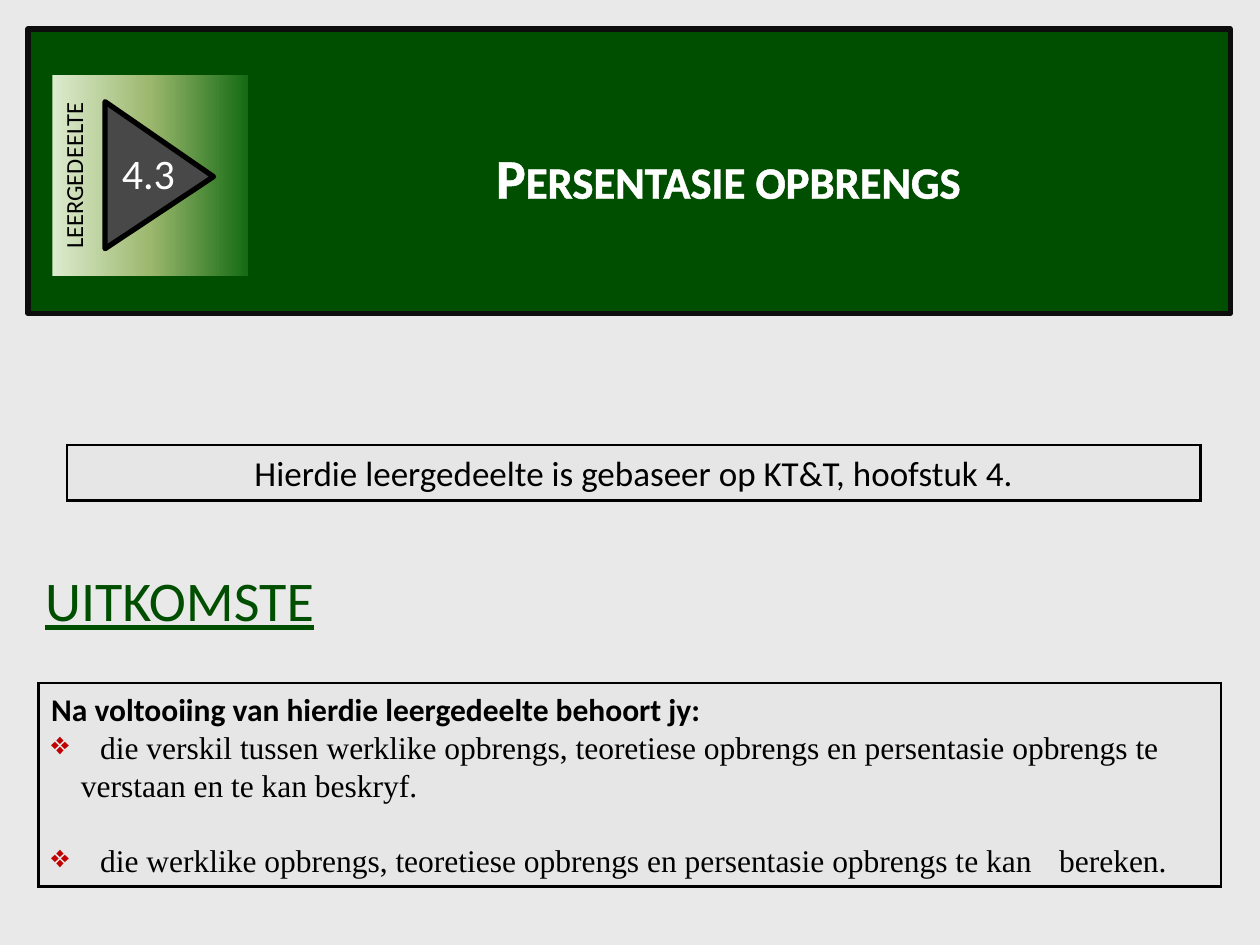
import copy
import pptx
import pptx.dml.color
import pptx.enum.shapes
import pptx.enum.text
import pptx.oxml
import pptx.oxml.ns
import pptx.util
from pptx.util import Pt

SHAPES = pptx.enum.shapes.MSO_SHAPE
ALIGN = pptx.enum.text.PP_ALIGN
ANCHOR = pptx.enum.text.MSO_ANCHOR

# Content
SECTION_LABEL, SECTION_NUMBER = "LEERGEDEELTE", "4.3"
TITLE = "Persentasie opbrengs"
SOURCE_NOTE = "Hierdie leergedeelte is gebaseer op KT&T, hoofstuk 4."
HEADING = "UITKOMSTE"
OUTCOMES_INTRO = "Na voltooiing van hierdie leergedeelte behoort jy:"
OUTCOMES = [
    "\tdie verskil tussen werklike opbrengs, teoretiese opbrengs en persentasie "
    "opbrengs te \tverstaan en te kan beskryf.",
    "\tdie werklike opbrengs, teoretiese opbrengs en persentasie opbrengs te kan \tbereken.",
]
GREEN, BLACK, WHITE, PANEL = "004E00", "000000", "FFFFFF", "E6E6E6"
BADGE_STOPS = [(0, "DDEBCF"), (0.5, "9CB86E"), (1, "156B13")]


def rgb(value):
    return pptx.dml.color.RGBColor.from_string(value)


def element(xml):
    """Parse a DrawingML fragment whose root tag has the a: prefix."""
    head, rest = xml.split(">", 1) if not xml.endswith("/>") else (xml[:-2], None)
    names = pptx.oxml.ns.nsdecls("a")
    return pptx.oxml.parse_xml(f"{head} {names}/>" if rest is None else f"{head} {names}>{rest}")


def add_panel(parent, kind, left, top, width, height, fill=None, line=None, weight=1.5, miter=False):
    shape = parent.add_shape(kind, Pt(left), Pt(top), Pt(width), Pt(height))
    shape.shadow.inherit = False
    if fill:
        shape.fill.solid()
        shape.fill.fore_color.rgb = rgb(fill)
    if line:
        shape.line.color.rgb = rgb(line)
        shape.line.width = Pt(weight)
        if miter:
            shape.line._get_or_add_ln().append(element('<a:miter lim="800000"/>'))
    else:
        shape.line.fill.background()
    return shape


def add_box(parent, left, top, width, height):
    return parent.add_textbox(Pt(left), Pt(top), Pt(width), Pt(height))


def write(box, text, size=18, font="Calibri", color=BLACK, bold=False, underline=False,
          small_caps=False, outline=None, align=ALIGN.LEFT, anchor=ANCHOR.TOP,
          wrap=True, bullet=None, before=0, first=True):
    frame = box.text_frame
    frame.word_wrap = wrap
    frame.vertical_anchor = anchor
    para = frame.paragraphs[0] if first else frame.add_paragraph()
    para.alignment = align
    para.space_before = Pt(before)
    span = para.add_run()
    span.text = text
    span.font.name, span.font.size = font, Pt(size)
    span.font.bold, span.font.underline = bold, underline
    span.font.color.rgb = rgb(color)
    run_format = span.font._element
    if small_caps:
        run_format.set("cap", "small")
    if outline:
        line_color, weight = outline
        run_format.insert(0, element(
            f'<a:ln w="{Pt(weight)}"><a:solidFill><a:srgbClr val="{line_color}"/></a:solidFill></a:ln>'))
    if bullet:
        layout = para._p.get_or_add_pPr()
        layout.set("marL", str(Pt(17)))
        layout.set("indent", str(-Pt(17)))
        layout.append(element(f'<a:buClr><a:srgbClr val="{bullet[1]}"/></a:buClr>'))
        layout.append(element(f'<a:buChar char="{bullet[0]}"/>'))
        layout.append(element(f'<a:tabLst><a:tab pos="{Pt(28)}" algn="l"/></a:tabLst>'))


def fill_gradient(shape, stops, angle):
    shape.fill.gradient()
    shape.fill.gradient_angle = angle
    stop_list = shape.fill.gradient_stops[0]._gs.getparent()
    stop_list.insert(1, copy.deepcopy(stop_list[0]))
    for stop, (position, color) in zip(shape.fill.gradient_stops, stops):
        stop.position = position
        stop.color.rgb = rgb(color)


deck = pptx.Presentation()
deck.slide_width, deck.slide_height = Pt(720), Pt(540)
page = deck.slides.add_slide(deck.slide_layouts[6])
page.background.fill.solid()
page.background.fill.fore_color.rgb = rgb("E9E9E9")

# Source note
note = add_panel(page.shapes, SHAPES.RECTANGLE, 38.2, 254.3, 648, 31.6, PANEL, BLACK, miter=True)
write(note, SOURCE_NOTE, size=20, align=ALIGN.CENTER, anchor=ANCHOR.MIDDLE)

# Title banner
add_panel(page.shapes, SHAPES.RECTANGLE, 16, 16.6, 687, 162.6, GREEN, "0D0D0D", 3)
title = add_box(page.shapes, 152, 78, 528.5, 46)
write(title, TITLE, size=32, color=WHITE, bold=True, small_caps=True,
      outline=(WHITE, 0.75), align=ALIGN.CENTER)

# Section badge
badge = page.shapes.add_group_shape().shapes
label = add_panel(badge, SHAPES.RECTANGLE, 28.3, 44.6, 115, 111.6)
label.rotation = 270
fill_gradient(label, BADGE_STOPS, 270)
write(label, SECTION_LABEL, size=14, align=ALIGN.CENTER)
pointer = add_panel(badge, SHAPES.ISOSCELES_TRIANGLE, 49, 69.1, 84, 62, "484848", BLACK, 3)
pointer.rotation = 90
pointer.adjustments[0] = 0.51
number = add_box(badge, 62.6, 80.6, 45.4, 36)
write(number, SECTION_NUMBER, size=24, color=WHITE, wrap=False)

# Outcomes
heading = add_box(page.shapes, 18.7, 319.7, 192, 46)
write(heading, HEADING, size=32, color=GREEN, underline=True, outline=(BLACK, 0.25))
outcomes = add_panel(page.shapes, SHAPES.RECTANGLE, 22.2, 390.2, 675.6, 116.6, PANEL, BLACK, miter=True)
write(outcomes, OUTCOMES_INTRO, bold=True, anchor=ANCHOR.MIDDLE)
for index, outcome in enumerate(OUTCOMES):
    write(outcomes, outcome, font="Times New Roman", anchor=ANCHOR.MIDDLE,
          bullet=("❖", "C00000"), before=21.5 * index, first=False)

deck.save("out.pptx")
